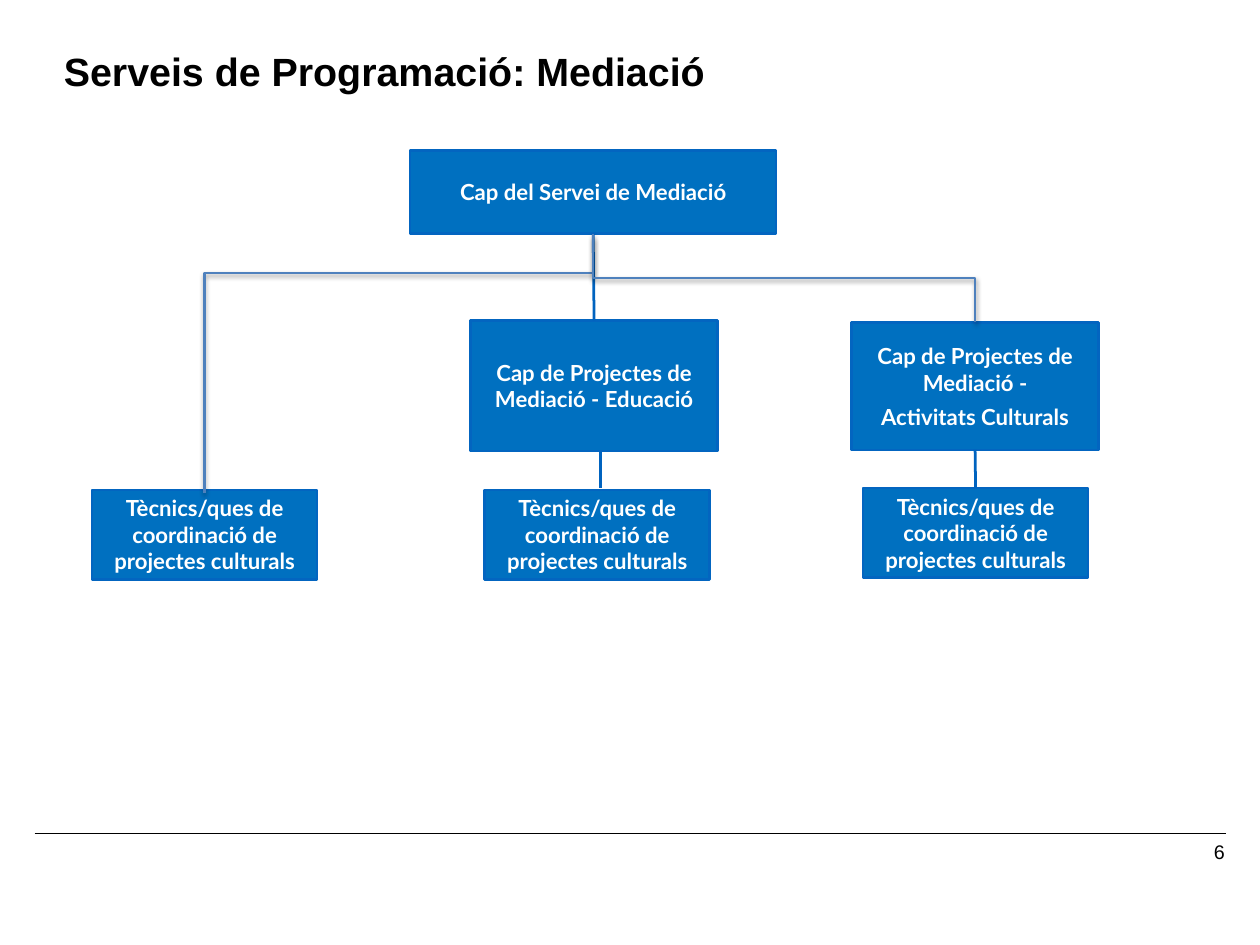
"""Build the organisation chart slide of the mediation service."""
from dataclasses import dataclass

from lxml.etree import SubElement
from pptx import Presentation
from pptx.dml.color import RGBColor as Color
from pptx.enum.shapes import MSO_CONNECTOR as Connector, MSO_SHAPE as Preset
from pptx.enum.text import MSO_ANCHOR as Anchor, MSO_AUTO_SIZE as AutoSize, PP_ALIGN as Align
from pptx.oxml.ns import qn
from pptx.util import Inches, Pt

WIDTH, HEIGHT = Inches(14.22), Inches(10.67)
TOP, BOTTOM = 0, 2
TITLE_ONLY = 5


@dataclass(frozen=True)
class Theme:
    """Colours, fonts and type sizes of the slide."""

    ink: Color = Color(0, 0, 0)
    paper: Color = Color(255, 255, 255)
    box: Color = Color.from_string("0070C0")
    border: Color = Color.from_string("0365C0")
    link: Color = Color.from_string("0063BF")
    elbow: Color = Color.from_string("4F81BD")
    heading_font: str = "Arial"
    box_font: str = "Lato"
    title_size: int = 32
    box_size: int = 18
    number_size: int = 16


THEME = Theme()


def across(share):
    """Turn a percentage of the slide width into a length."""
    return int(WIDTH * share / 100)


def down(share):
    """Turn a percentage of the slide height into a length."""
    return int(HEIGHT * share / 100)


def area(left, top, width, height):
    """Turn four percentages into a position and a size."""
    return across(left), down(top), across(width), down(height)


def write(paragraph, text, font_name, size, color, bold=False):
    """Add one formatted run to a paragraph."""
    run = paragraph.add_run()
    run.text = text
    run.font.name, run.font.size, run.font.bold = font_name, Pt(size), bold
    run.font.color.rgb = color


def set_margins(frame, inches):
    """Give a text frame the same inset on all four sides."""
    frame.margin_left = frame.margin_right = Inches(inches)
    frame.margin_top = frame.margin_bottom = Inches(inches)


def add_title(slide, text):
    """Place and format the title placeholder."""
    title = slide.shapes.title
    title.left, title.top, title.width, title.height = area(4.57, 5.34, 78.76, 5.34)
    frame = title.text_frame
    set_margins(frame, 0.07)
    frame.word_wrap = True
    frame.auto_size = AutoSize.SHAPE_TO_FIT_TEXT
    frame.vertical_anchor = Anchor.TOP
    paragraph = frame.paragraphs[0]
    paragraph.alignment, paragraph.line_spacing = Align.LEFT, 0.8
    paragraph.space_before = Pt(0)
    write(paragraph, text, THEME.heading_font, THEME.title_size, THEME.ink, True)


def add_box(slide, place, *texts):
    """Add a filled box with one centred paragraph for each text."""
    box = slide.shapes.add_shape(Preset.RECTANGLE, *area(*place))
    box.shadow.inherit = False
    box.fill.solid()
    box.fill.fore_color.rgb = THEME.box
    box.line.color.rgb, box.line.width = THEME.border, Pt(2)
    frame = box.text_frame
    set_margins(frame, 0.04)
    frame.word_wrap, frame.vertical_anchor = True, Anchor.MIDDLE
    for index, text in enumerate(texts):
        paragraph = frame.add_paragraph() if index else frame.paragraphs[0]
        paragraph.alignment = Align.CENTER
        paragraph.space_before = Pt(3.2 if index else 0)
        paragraph.space_after = Pt(3.2)
        write(paragraph, text, THEME.box_font, THEME.box_size, THEME.paper, True)
    return box


def add_line(slide, start, end, color, width, kind=Connector.STRAIGHT):
    """Add a connector and return it with its empty effect list."""
    line = slide.shapes.add_connector(kind, *start, *end)
    line.line.color.rgb, line.line.width = color, Pt(width)
    return line, SubElement(line._element.spPr, qn("a:effectLst"))


def bottom_middle(box):
    """Return the middle of the lower side of a box."""
    return box.left + box.width // 2, box.top + box.height


def top_middle(box):
    """Return the middle of the upper side of a box."""
    return box.left + box.width // 2, box.top


def join(slide, parent, child):
    """Join two stacked boxes with a straight connector."""
    line, _ = add_line(slide, bottom_middle(parent), top_middle(child), THEME.link, 2.25)
    line.begin_connect(parent, BOTTOM)
    line.end_connect(child, TOP)


def add_shadow(effects):
    """Put a soft downward shadow into an effect list."""
    shadow = SubElement(effects, qn("a:outerShdw"), blurRad=str(Pt(4)), dist=str(Pt(2)),
                        dir="5400000", rotWithShape="0")
    color = SubElement(shadow, qn("a:srgbClr"), val=str(THEME.ink))
    SubElement(color, qn("a:alpha"), val="38000")


def branch(slide, parent, child, bend, shift=0):
    """Run an elbow down, sideways and down again between two boxes."""
    (start_x, start_y), (end_x, end_y) = bottom_middle(parent), top_middle(child)
    drop, reach = end_y - start_y, abs(end_x - start_x)
    left = (start_x + end_x - drop) // 2
    top = (start_y + end_y - reach) // 2 + down(shift)
    leftward = end_x < start_x
    begin_x, finish_x = (left, left + drop) if leftward else (left + drop, left)
    line, effects = add_line(slide, (begin_x, top), (finish_x, top + reach),
                             THEME.elbow, 2, Connector.ELBOW)
    properties = line._element.spPr
    properties.find(qn("a:xfrm")).set("rot", str((90 if leftward else 270) * 60000))
    adjustments = properties.find(qn("a:prstGeom")).get_or_add_avLst()
    SubElement(adjustments, qn("a:gd"), name="adj1", fmla=f"val {round(bend * 100000)}")
    add_shadow(effects)


def add_footer(slide, number):
    """Add the bottom rule and the slide number."""
    add_line(slide, (across(2.74), down(88.19)), (across(97.33), down(88.19)), THEME.ink, 1)
    frame = slide.shapes.add_textbox(*area(74.54, 88.38, 23.35, 3.84)).text_frame
    frame.word_wrap = True
    paragraph = frame.paragraphs[0]
    paragraph.alignment = Align.RIGHT
    write(paragraph, number, THEME.heading_font, THEME.number_size, THEME.ink)


def main():
    """Build and save the slide."""
    presentation = Presentation()
    presentation.slide_width, presentation.slide_height = WIDTH, HEIGHT
    slide = presentation.slides.add_slide(presentation.slide_layouts[TITLE_ONLY])
    add_title(slide, "Serveis de Programació: Mediació")
    add_footer(slide, "6")

    head = add_box(slide, (32.56, 15.93, 29.04, 8.81), "Cap del Servei de Mediació")
    activities = add_box(slide, (67.58, 34.11, 19.62, 13.5),
                         "Cap de Projectes de Mediació -", "Activitats Culturals")
    education = add_box(slide, (37.34, 33.93, 19.62, 13.78),
                        "Cap de Projectes de Mediació - Educació")
    general_team, _, activities_team = [
        add_box(slide, (left, top, 17.86, 9.47),
                "Tècnics/ques de coordinació de projectes culturals")
        for left, top in ((7.31, 51.83), (38.47, 51.83), (68.5, 51.64))
    ]

    join(slide, head, education)
    join(slide, activities, activities_team)
    add_line(slide, (across(47.68), down(47.8)), (across(47.68), down(51.64)), THEME.link, 2.25)
    branch(slide, head, general_team, 0.14, shift=0.38)
    branch(slide, head, activities, 0.5)
    presentation.save("out.pptx")


if __name__ == "__main__":
    main()
